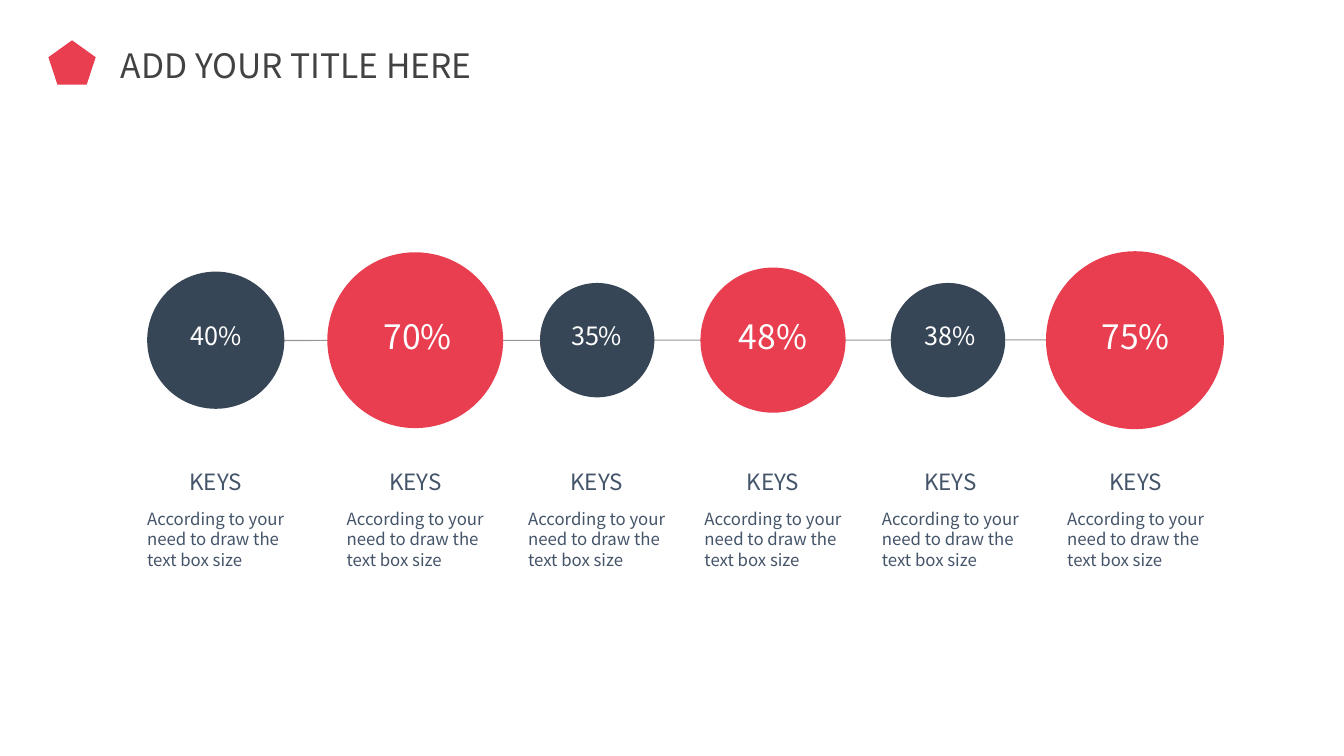
from dataclasses import dataclass

from lxml.etree import SubElement
from pptx import Presentation
from pptx.dml.color import RGBColor
from pptx.enum.shapes import MSO_CONNECTOR, MSO_SHAPE
from pptx.enum.text import MSO_ANCHOR, MSO_AUTO_SIZE, PP_ALIGN
from pptx.oxml.ns import qn
from pptx.util import Pt

FONT = "Noto Sans CJK JP"
RED = RGBColor(0xE8, 0x3E, 0x50)
NAVY = RGBColor(0x37, 0x46, 0x56)
SLATE = RGBColor(0x44, 0x54, 0x69)
CHARCOAL = RGBColor(0x42, 0x42, 0x42)
GRAY = RGBColor(0x96, 0x96, 0x96)
WHITE = RGBColor(0xFF, 0xFF, 0xFF)

AXIS_Y = 243
PERCENT_Y = 239.8
PERCENT_WIDTH = 95.8
KEY_WIDTH = 184.3
BODY_WIDTH = 108.7
BODY_INDENT = 49
BODY_TEXT = "According to your need to draw the text box size"


@dataclass(frozen=True)
class Bubble:
    percent: str
    circle_center: float
    diameter: float
    text_center: float
    percent_shift: float = 0
    highlighted: bool = False


@dataclass(frozen=True)
class TextStyle:
    size: float
    color: RGBColor
    align: PP_ALIGN = PP_ALIGN.LEFT
    inset_x: float = 0
    inset_y: float = 0


BUBBLES = [
    Bubble("40%", 154.1, 98, 154.1),
    Bubble("70%", 296.6, 125.6, 296.6, percent_shift=1.8, highlighted=True),
    Bubble("35%", 426.6, 81.7, 426.2),
    Bubble("48%", 552.2, 103.7, 552.2, highlighted=True),
    Bubble("38%", 677.2, 81.7, 678.9),
    Bubble("75%", 810.7, 127.1, 811.3, highlighted=True),
]

TITLE_STYLE = TextStyle(24, CHARCOAL, inset_x=7.2, inset_y=3.6)
PERCENT_SMALL = TextStyle(18, WHITE, PP_ALIGN.CENTER, 3.6, 1.8)
PERCENT_LARGE = TextStyle(24, WHITE, PP_ALIGN.CENTER, 3.6, 1.8)
KEY_STYLE = TextStyle(16, SLATE, PP_ALIGN.CENTER)
BODY_STYLE = TextStyle(12, SLATE)


def place(shape, left: float, top: float, width: float, height: float) -> None:
    shape.left, shape.top = Pt(left), Pt(top)
    shape.width, shape.height = Pt(width), Pt(height)


def write(shape, text: str, style: TextStyle) -> None:
    frame = shape.text_frame
    frame.text = text
    frame.word_wrap = True
    frame.auto_size = MSO_AUTO_SIZE.SHAPE_TO_FIT_TEXT
    frame.vertical_anchor = MSO_ANCHOR.TOP
    frame.margin_left = frame.margin_right = Pt(style.inset_x)
    frame.margin_top = frame.margin_bottom = Pt(style.inset_y)
    paragraph = frame.paragraphs[0]
    paragraph.alignment = style.align
    font = paragraph.runs[0].font
    font.name, font.size = FONT, Pt(style.size)
    font.color.rgb = style.color


def add_text(slide, text: str, style: TextStyle, left: float, top: float,
             width: float, height: float) -> None:
    box = slide.shapes.add_textbox(Pt(left), Pt(top), Pt(width), Pt(height))
    write(box, text, style)


def add_solid(slide, preset: MSO_SHAPE, color: RGBColor, left: float, top: float,
              width: float, height: float) -> None:
    shape = slide.shapes.add_shape(preset, Pt(left), Pt(top), Pt(width), Pt(height))
    shape.shadow.inherit = False
    shape.fill.solid()
    shape.fill.fore_color.rgb = color
    shape.line.fill.background()


def add_axis(slide) -> None:
    first, last = BUBBLES[0], BUBBLES[-1]
    axis = slide.shapes.add_connector(
        MSO_CONNECTOR.STRAIGHT,
        Pt(first.circle_center - first.diameter / 2), Pt(AXIS_Y + 0.3),
        Pt(last.circle_center + last.diameter / 2), Pt(AXIS_Y - 0.3))
    axis.line.color.rgb = GRAY
    axis.line.width = Pt(0.75)
    SubElement(axis._element.spPr, qn("a:effectLst"))


def add_circle(slide, bubble: Bubble) -> None:
    radius = bubble.diameter / 2
    add_solid(slide, MSO_SHAPE.OVAL, RED if bubble.highlighted else NAVY,
              bubble.circle_center - radius, AXIS_Y - radius,
              bubble.diameter, bubble.diameter)


def add_labels(slide, bubble: Bubble) -> None:
    center = bubble.text_center
    style = PERCENT_LARGE if bubble.highlighted else PERCENT_SMALL
    height = style.size * 1.2 + 2 * style.inset_y
    add_text(slide, bubble.percent, style,
             center + bubble.percent_shift - PERCENT_WIDTH / 2,
             PERCENT_Y - height / 2, PERCENT_WIDTH, height)
    add_text(slide, "KEYS", KEY_STYLE, center - KEY_WIDTH / 2, 334.1, KEY_WIDTH, 19.4)
    add_text(slide, BODY_TEXT, BODY_STYLE, center - BODY_INDENT, 363.6, BODY_WIDTH, 43.9)


def main() -> None:
    presentation = Presentation()
    presentation.slide_width, presentation.slide_height = Pt(960), Pt(540)
    slide = presentation.slides.add_slide(presentation.slide_layouts[5])

    # Heading
    add_solid(slide, MSO_SHAPE.REGULAR_PENTAGON, RED, 34.6, 28.8, 33.8, 31.7)
    title = slide.shapes.title
    place(title, 79.2, 28.8, 356.4, 36)
    write(title, "ADD YOUR TITLE HERE", TITLE_STYLE)

    # Bubble chain
    add_axis(slide)
    for bubble in BUBBLES:
        add_circle(slide, bubble)

    # Percentages and descriptions
    for bubble in BUBBLES:
        add_labels(slide, bubble)

    presentation.save("out.pptx")


if __name__ == "__main__":
    main()
